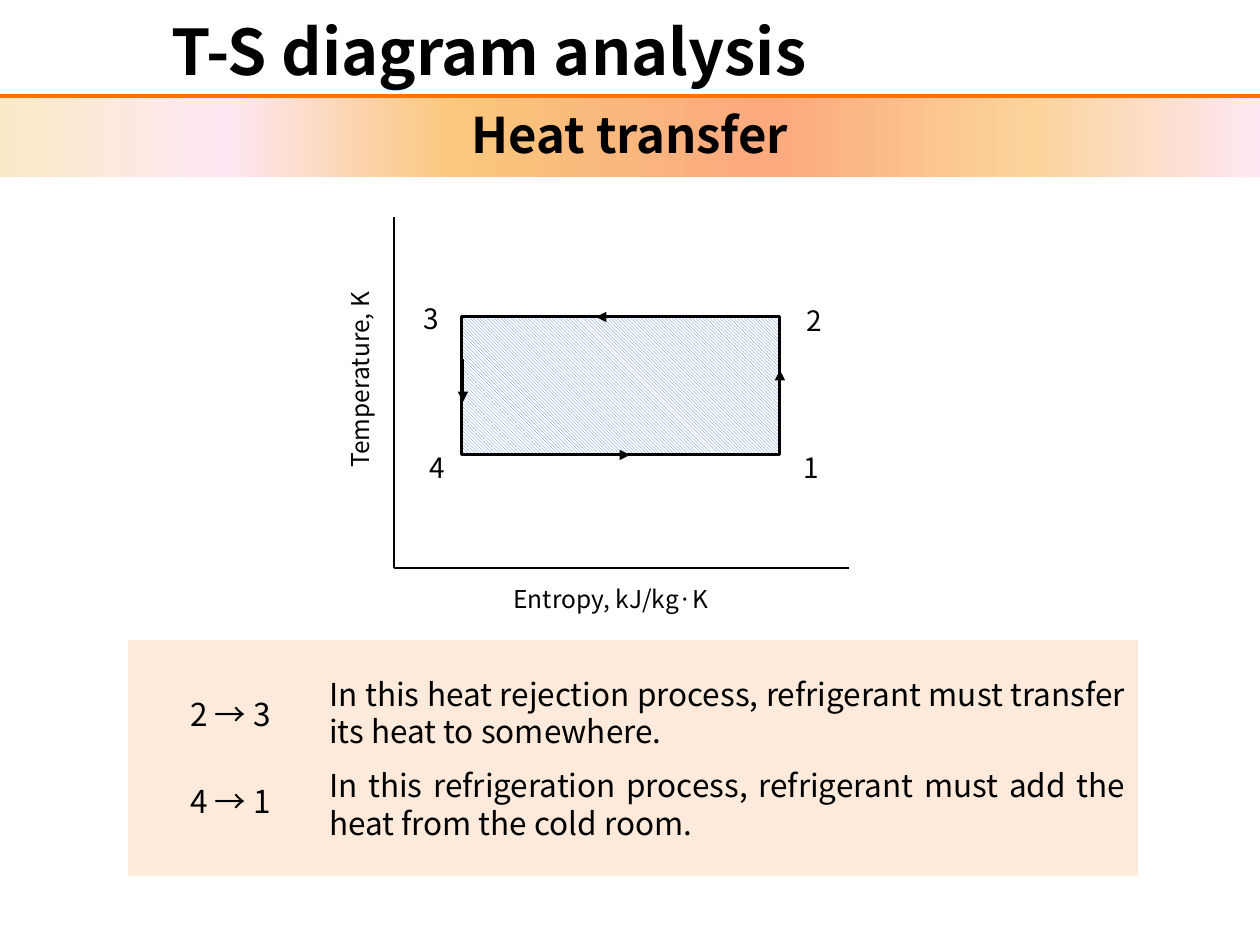
from lxml import etree
from pptx import Presentation
from pptx.dml.color import RGBColor
from pptx.enum.dml import MSO_PATTERN
from pptx.enum.shapes import MSO_CONNECTOR, MSO_SHAPE
from pptx.enum.text import MSO_ANCHOR, PP_ALIGN
from pptx.oxml.ns import qn
from pptx.util import Pt

RECT = MSO_SHAPE.RECTANGLE
LINE = MSO_CONNECTOR.STRAIGHT
HATCH = MSO_PATTERN.DARK_DOWNWARD_DIAGONAL
TOP, MID = MSO_ANCHOR.TOP, MSO_ANCHOR.MIDDLE
LEFT, MIDDLE, FULL = PP_ALIGN.LEFT, PP_ALIGN.CENTER, PP_ALIGN.JUSTIFY
FONT = "Noto Sans CJK KR"
EMU = 914400 / 126
HUES = {"ink": "000000", "rule": "FF7300", "hatch": "4F81BD",
        "white": "FFFFFF", "note": "FDEADA"}
HUES = {name: RGBColor.from_string(code) for name, code in HUES.items()}
BAND = {0: "FBEAC7", 18: "FEE7F2", 36: "FAC77D",
        61: "FBA97D", 82: "FBD49C", 100: "FEE7F2"}

deck = Presentation()
deck.slide_width, deck.slide_height = round(1260 * EMU), round(945 * EMU)
slide = deck.slides.add_slide(deck.slide_layouts[6])
shapes = slide.shapes


def write(shape, lines, size, align=LEFT, anchor=TOP, bold=False):
    frame = shape.text_frame
    frame.word_wrap = True
    frame.vertical_anchor = anchor
    frame.text = "\n".join(lines)
    look = {"name": FONT, "size": Pt(size), "bold": bold}
    for para in frame.paragraphs:
        para.alignment = align
        for run in para.runs:
            for key, value in look.items():
                setattr(run.font, key, value)
            run.font.color.rgb = HUES["ink"]
    return frame


def draw(ends, hue, width, arrow=False):
    line = shapes.add_connector(LINE, *[round(v * EMU) for v in ends])
    line.line.color.rgb = HUES[hue]
    line.line.width = Pt(width)
    if arrow:
        etree.SubElement(line.line._get_or_add_ln(), qn("a:tailEnd"), type="triangle")
    etree.SubElement(line._element.spPr, qn("a:effectLst"))


# Rule under the title
draw((0, 96, 1260, 96), "rule", 2)

# Axes
draw((394, 217, 394, 568), "ink", 0.75)
draw((394, 568, 849, 568), "ink", 0.75)

# Filled boxes: cycle, subtitle band, notes
boxes = {"cycle": (462, 317, 318, 138), "band": (0, 98, 1260, 79),
         "note": (128, 640, 1010, 236)}
for name, place in boxes.items():
    box = shapes.add_shape(RECT, *[round(v * EMU) for v in place])
    box.shadow.inherit = False
    box.line.fill.background()
    boxes[name] = box

cycle = boxes["cycle"]
cycle.fill.patterned()
cycle.fill.pattern = HATCH
cycle.fill.fore_color.rgb = HUES["hatch"]
cycle.fill.back_color.rgb = HUES["white"]
cycle.line.color.rgb = HUES["ink"]
cycle.line.width = Pt(1.75)

band = boxes["band"]
band.fill.gradient()
band.fill.gradient_angle = 0
stops = band._element.spPr.find(qn("a:gradFill")).find(qn("a:gsLst"))
for stop in list(stops):
    stops.remove(stop)
for pos, code in BAND.items():
    stop = etree.SubElement(stops, qn("a:gs"), pos=str(pos * 1000))
    etree.SubElement(stop, qn("a:srgbClr"), val=code)
write(band, ["Heat transfer"], 28, MIDDLE, TOP, True)

note = boxes["note"]
note.fill.solid()
note.fill.fore_color.rgb = HUES["note"]
frame = write(note, [
    "In this heat rejection process, refrigerant must transfer its heat to somewhere.",
    "In this refrigeration process, refrigerant must add the heat from the cold room.",
], 18, FULL, MID)
for para in frame.paragraphs:
    para._p.get_or_add_pPr().set("marL", str(round(189 * EMU)))
frame.paragraphs[1].space_before = Pt(9)

# Arrows along the cycle
for ends in ((780, 412, 780, 370), (640, 317, 596, 317),
             (586, 455, 630, 455), (463, 359, 463, 402)):
    draw(ends, "ink", 0.75, True)

# Title, axis names, corner numbers, process names
texts = [
    ("T-S diagram analysis", (0, 0, 978, 100), 36),
    ("Temperature, K", (339, 273, 54, 207), 14),
    ("Entropy, kJ/kg·K", (501, 578, 256, 43), 14),
    ("1", (791, 444, 88, 47), 16),
    ("2", (794, 297, 103, 47), 16),
    ("3", (411, 295, 72, 47), 16),
    ("4", (417, 444, 103, 47), 16),
    ("2 → 3", (178, 689, 117, 50), 18),
    ("4 → 1", (178, 776, 117, 50), 18),
]
for text, place, size in texts:
    box = shapes.add_textbox(*[round(v * EMU) for v in place])
    if size == 36:
        write(box, [text], size, MIDDLE, MID, True)
    else:
        frame = write(box, [text], size)
    if text.startswith("Temp"):
        frame._txBody.bodyPr.set("vert", "vert270")

deck.save("out.pptx")
